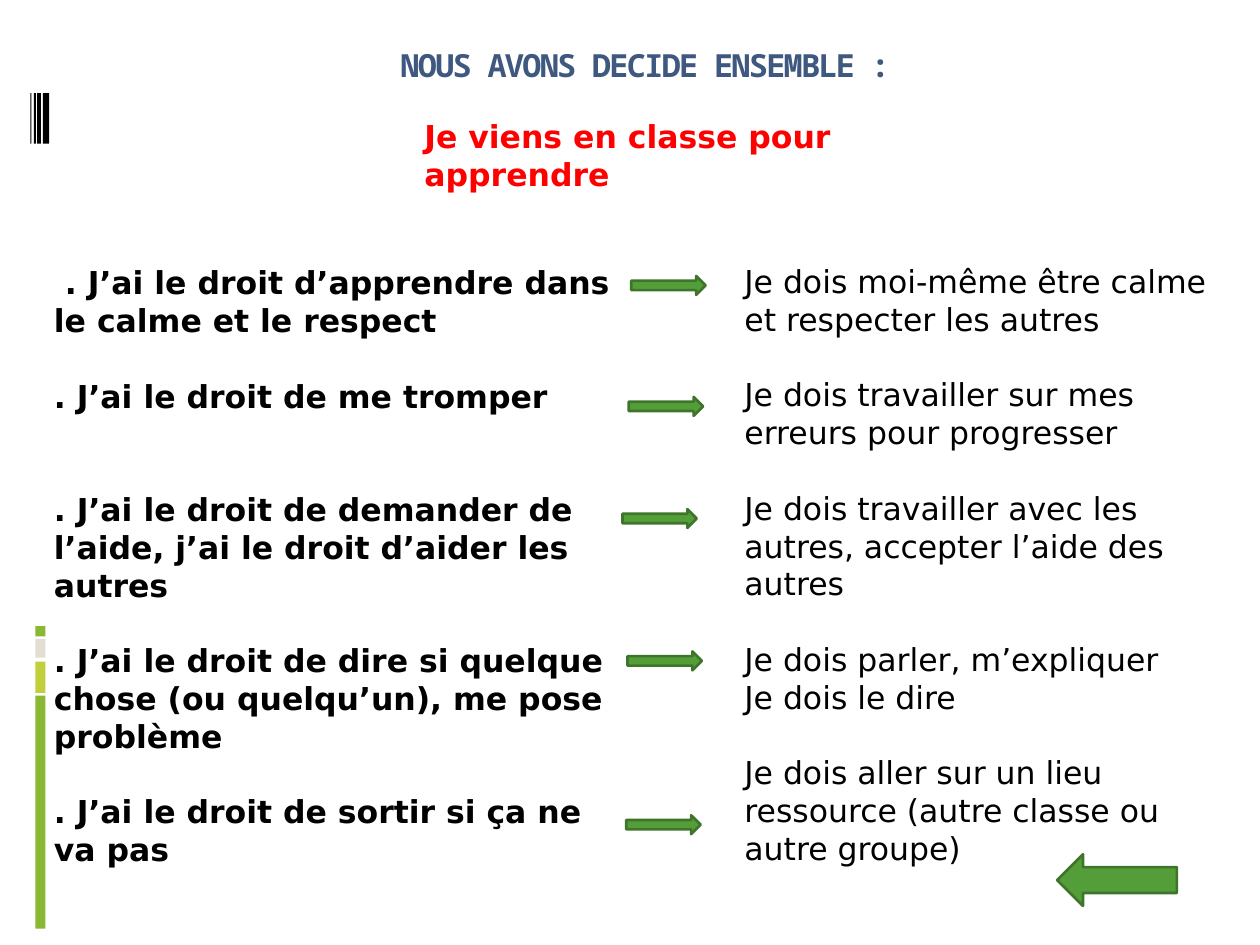
"""Build the class charter slide that pairs each pupil's right with a duty."""
from typing import NamedTuple

from pptx import Presentation
from pptx.dml.color import RGBColor
from pptx.enum.shapes import MSO_SHAPE
from pptx.enum.text import MSO_ANCHOR, MSO_AUTO_SIZE, PP_ALIGN
from pptx.util import Inches, Pt

RECTANGLE = MSO_SHAPE.RECTANGLE
RIGHT_ARROW, LEFT_ARROW = MSO_SHAPE.RIGHT_ARROW, MSO_SHAPE.LEFT_ARROW
TOP, NO_FIT, CENTER = MSO_ANCHOR.TOP, MSO_AUTO_SIZE.NONE, PP_ALIGN.CENTER

BLACK = RGBColor(0x00, 0x00, 0x00)
RED = RGBColor(0xFF, 0x00, 0x00)
SLATE = RGBColor(0x3E, 0x58, 0x7F)
LEAF = RGBColor(0x8A, 0xB8, 0x33)
LIME = RGBColor(0xC0, 0xCF, 0x3A)
SAND = RGBColor(0xE3, 0xDE, 0xD1)
GREEN = RGBColor(0x54, 0x9E, 0x39)
DARK_GREEN = RGBColor(0x3E, 0x75, 0x2A)

COLUMNS, ROWS = 100, 75
WIDTH, HEIGHT = Inches(10), Inches(7.5)
LINE_PITCH = 21.6


class Area(NamedTuple):
    """Hold a place in grid columns and rows."""
    left: float
    top: float
    width: float
    height: float

    def lengths(self) -> list[int]:
        """Convert the grid units to slide lengths."""
        column, row = WIDTH / COLUMNS, HEIGHT / ROWS
        return [round(self.left * column), round(self.top * row),
                round(self.width * column), round(self.height * row)]


class Bar(NamedTuple):
    """Describe one plain bar of the margin decoration."""
    area: Area
    color: RGBColor


class Statement(NamedTuple):
    """Hold a sentence and the number of free lines after it."""
    text: str
    gap: int = 1


BARS = [
    *(Bar(Area(2.8, top, 0.8, height), color) for top, height, color in [
        (55.2, 18.5, LEAF), (52.5, 2.5, LIME), (50.7, 1.5, SAND), (49.7, 0.8, LEAF)]),
    *(Bar(Area(left, 7.4, width, 4), BLACK) for left, width in [
        (3.4, 0.5), (2.95, 0.3), (2.7, 0.15), (2.4, 0.1)]),
]
RIGHTS = [
    Statement(" . J’ai le droit d’apprendre dans le calme et le respect"),
    Statement(". J’ai le droit de me tromper", 2),
    Statement(". J’ai le droit de demander de l’aide, j’ai le droit d’aider les autres"),
    Statement(". J’ai le droit de dire si quelque chose (ou quelqu’un), me pose problème"),
    Statement(". J’ai le droit de sortir si ça ne va pas", 0),
]
DUTIES = [
    Statement("Je dois moi-même être calme et respecter les autres"),
    Statement("Je dois travailler sur mes erreurs pour progresser"),
    Statement("Je dois travailler avec les autres, accepter l’aide des autres"),
    Statement("Je dois parler, m’expliquer", 0),
    Statement("Je dois le dire"),
    Statement("Je dois aller sur un lieu ressource (autre classe ou autre groupe)", 0),
]
MOTTO = [Statement("Je viens en classe pour apprendre", 0)]
LINK_STARTS = [(50.1, 21.9), (49.9, 31.5), (49.4, 40.4), (49.8, 51.7), (49.7, 64.7)]
BODY = {"name": "DejaVu Sans", "size": Pt(18), "color": BLACK, "bold": False}
TITLE = {"name": "Noto Sans Mono", "size": Pt(18.2), "color": SLATE, "bold": True}


def format_font(font, values: dict) -> None:
    """Apply a dict of format values to a font."""
    for key, value in values.items():
        if key == "color":
            font.color.rgb = value
        else:
            setattr(font, key, value)


def add_figure(slide, kind, area: Area, fill: RGBColor, outline=None) -> None:
    """Draw a filled preset shape, outlined if a colour is given."""
    figure = slide.shapes.add_shape(kind, *area.lengths())
    figure.shadow.inherit = False
    figure.fill.solid()
    figure.fill.fore_color.rgb = fill
    if outline is None:
        figure.line.fill.background()
    else:
        figure.line.color.rgb = outline
        figure.line.width = Pt(1.5)


def add_statements(slide, area: Area, statements: list[Statement], **changes) -> None:
    """Write statements as paragraphs spaced by whole lines."""
    frame = slide.shapes.add_textbox(*area.lengths()).text_frame
    frame.word_wrap = True
    for index, statement in enumerate(statements):
        paragraph = frame.add_paragraph() if index else frame.paragraphs[0]
        paragraph.line_spacing = Pt(LINE_PITCH)
        paragraph.space_after = Pt(LINE_PITCH * statement.gap)
        run = paragraph.add_run()
        run.text = statement.text
        format_font(run.font, BODY | changes)


def set_title(slide, text: str) -> None:
    """Place and format the title placeholder."""
    title = slide.shapes.title
    title.left, title.top, title.width, title.height = Area(10.9, 3.1, 80.6, 6.2).lengths()
    frame = title.text_frame
    for key, value in {"vertical_anchor": TOP, "auto_size": NO_FIT, "word_wrap": True}.items():
        setattr(frame, key, value)
    paragraph = frame.paragraphs[0]
    paragraph.alignment = CENTER
    run = paragraph.add_run()
    run.text = text
    format_font(run.font, TITLE)
    run._r.get_or_add_rPr().set("spc", "-100")


def main() -> None:
    """Assemble and save the slide."""
    deck = Presentation()
    deck.slide_width, deck.slide_height = WIDTH, HEIGHT
    slide = deck.slides.add_slide(deck.slide_layouts[5])
    for bar in BARS:
        add_figure(slide, RECTANGLE, bar.area, bar.color)
    set_title(slide, "NOUS AVONS DECIDE ENSEMBLE :")
    add_statements(slide, Area(3.3, 20.4, 46.7, 49.5), RIGHTS, bold=True)
    add_statements(slide, Area(32.7, 8.8, 37.5, 7.1), MOTTO, bold=True, color=RED)
    add_statements(slide, Area(58.1, 20.3, 41.9, 52.5), DUTIES)
    for left, top in LINK_STARTS:
        add_figure(slide, RIGHT_ARROW, Area(left, top, 5.9, 1.5), GREEN, DARK_GREEN)
    add_figure(slide, LEFT_ARROW, Area(83.9, 67.8, 9.5, 4.1), GREEN, DARK_GREEN)
    deck.save("out.pptx")


if __name__ == "__main__":
    main()
